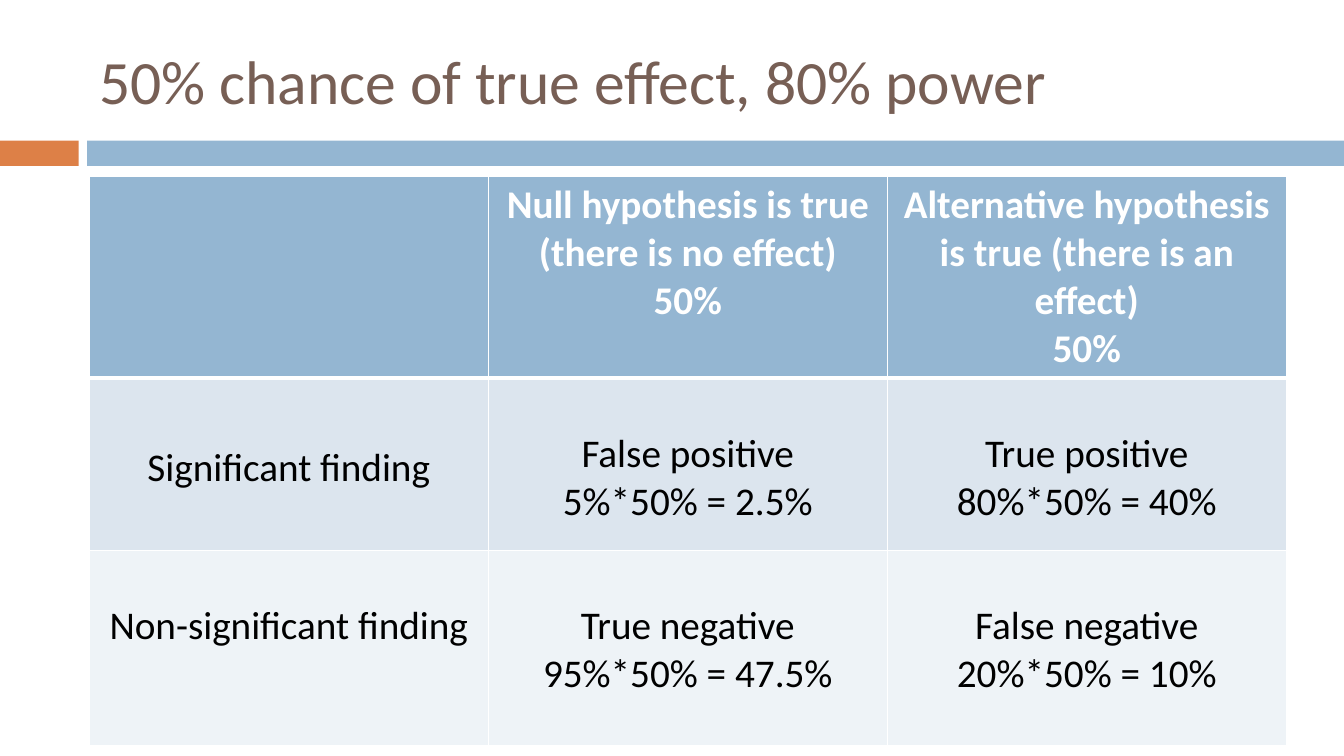
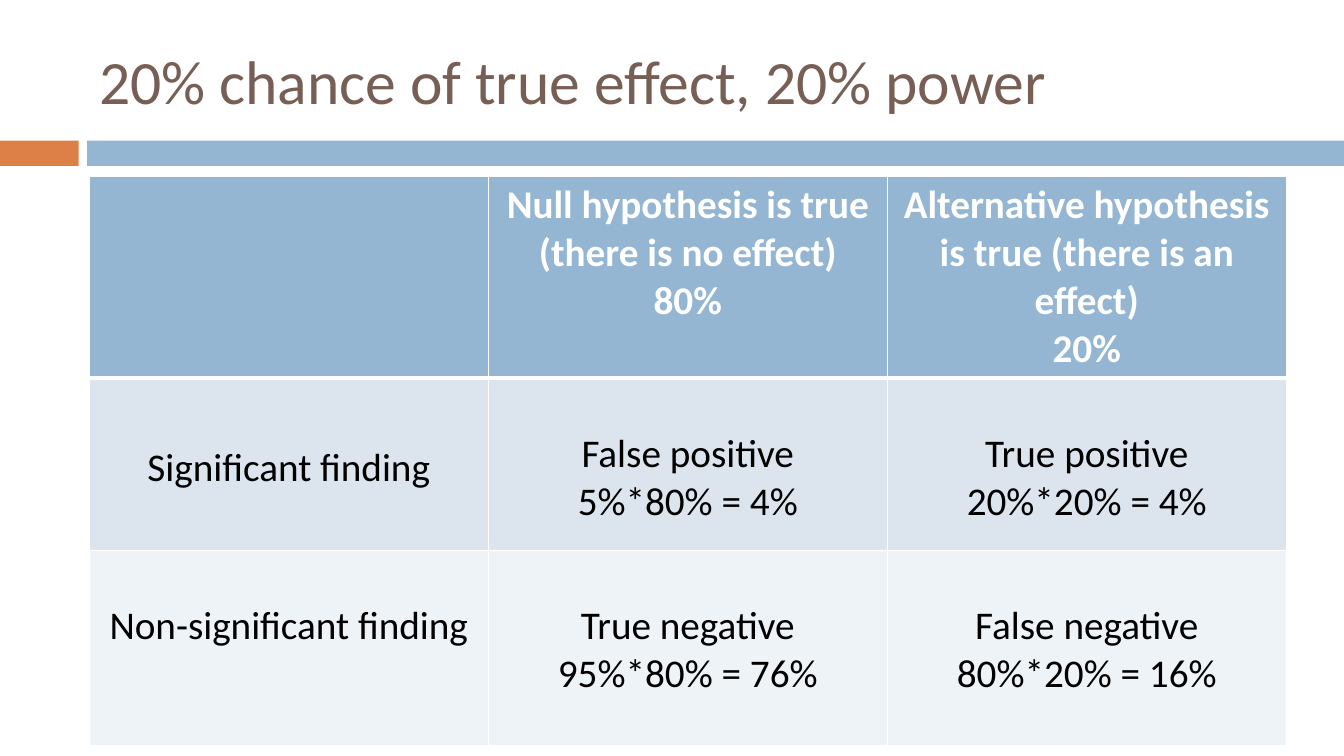
from lxml.etree import SubElement
from pptx import Presentation
from pptx.dml.color import RGBColor
from pptx.enum.shapes import MSO_SHAPE as Shape
from pptx.enum.text import MSO_ANCHOR as Anchor, PP_ALIGN as Align
from pptx.oxml.ns import qn
from pptx.util import Emu, Pt

WHITE = RGBColor(0xFF, 0xFF, 0xFF)
BLACK = RGBColor(0, 0, 0)
BROWN = RGBColor(0x77, 0x5F, 0x55)
ORANGE = RGBColor(0xDD, 0x80, 0x47)
BLUE = RGBColor(0x94, 0xB6, 0xD2)
LIGHT_BLUE = RGBColor(0xDC, 0xE5, 0xEE)
PALE_BLUE = RGBColor(0xEE, 0xF3, 0xF7)

FONT = "Calibri"
WIDTH, HEIGHT = 1280, 720
LEFT = 85
COLUMN_WIDTH = 380
ROW_HEIGHTS = (192, 164, 186)
ROW_FILLS = (BLUE, LIGHT_BLUE, PALE_BLUE)
ALPHA = 5


def px(length):
    return Emu(length * 9525)


class Deck:
    def __init__(self):
        self.presentation = Presentation()
        self.presentation.slide_width = px(WIDTH)
        self.presentation.slide_height = px(HEIGHT)
        self.slide = None

    def start_slide(self, title):
        self.slide = self.presentation.slides.add_slide(self.presentation.slide_layouts[6])
        self.band(0, 75, ORANGE)
        self.band(83, WIDTH - 83, BLUE)
        self.title(title)

    def band(self, left, width, color):
        band = self.slide.shapes.add_shape(Shape.RECTANGLE, px(left), px(134), px(width), px(24))
        band.shadow.inherit = False
        band.fill.solid()
        band.fill.fore_color.rgb = color
        band.line.fill.background()

    def title(self, text):
        frame = self.slide.shapes.add_textbox(px(LEFT), px(24), px(1141), px(104)).text_frame
        frame.word_wrap = True
        frame.vertical_anchor = Anchor.MIDDLE
        frame.text = text
        self.style(frame.paragraphs[0], 44, BROWN)

    def style(self, paragraph, size, color, bold=False):
        for run in paragraph.runs:
            run.font.name = FONT
            run.font.size = Pt(size)
            run.font.color.rgb = color
            run.font.bold = bold

    def table(self, rows, top_margins):
        table = self.slide.shapes.add_table(
            len(rows), len(rows[0]), px(LEFT), px(168),
            px(COLUMN_WIDTH * len(rows[0])), px(sum(ROW_HEIGHTS))).table
        table.first_row = table.horz_banding = False
        for column in table.columns:
            column.width = px(COLUMN_WIDTH)
        for r, texts in enumerate(rows):
            table.rows[r].height = px(ROW_HEIGHTS[r])
            for c, text in enumerate(texts):
                cell = table.cell(r, c)
                cell.margin_top = px(top_margins[r][c])
                self.cell_text(cell, text, is_header=r == 0)
                self.cell_borders(cell, top=3 if r == 1 else 1, bottom=3 if r == 0 else 1)
                cell.fill.solid()
                cell.fill.fore_color.rgb = ROW_FILLS[r]

    def cell_text(self, cell, text, is_header):
        cell.text_frame.text = text
        for paragraph in cell.text_frame.paragraphs:
            paragraph.alignment = Align.CENTER
            self.style(paragraph, 28, WHITE if is_header else BLACK, is_header)

    def cell_borders(self, cell, top, bottom):
        properties = cell._tc.get_or_add_tcPr()
        for side, width in (("L", 1), ("R", 1), ("T", top), ("B", bottom)):
            border = SubElement(properties, qn(f"a:ln{side}"), w=str(Pt(width)))
            fill = SubElement(border, qn("a:solidFill"))
            SubElement(fill, qn("a:srgbClr"), val=str(WHITE))

    def save(self):
        self.presentation.save("out.pptx")


def outcome(label, rate, share):
    return f"{label}\n{rate}%*{share}% = {rate * share / 100:g}%"


def add_scenario(deck, effect, power):
    null = 100 - effect
    deck.start_slide(f"{effect}% chance of true effect, {power}% power")
    deck.table(
        [
            ["",
             f"Null hypothesis is true (there is no effect)\n{null}%",
             f"Alternative hypothesis is true (there is an effect)\n{effect}%"],
            ["Significant finding",
             outcome("False positive", ALPHA, null),
             outcome("True positive", power, effect)],
            ["Non-significant finding",
             outcome("True negative", 100 - ALPHA, null),
             outcome("False negative", 100 - power, effect)],
        ],
        top_margins=[(5, 5, 5), (63, 50, 50), (50, 50, 50)],
    )


def main():
    deck = Deck()
    for effect, power in ((50, 80), (20, 20)):
        add_scenario(deck, effect, power)
    deck.save()


if __name__ == "__main__":
    main()
